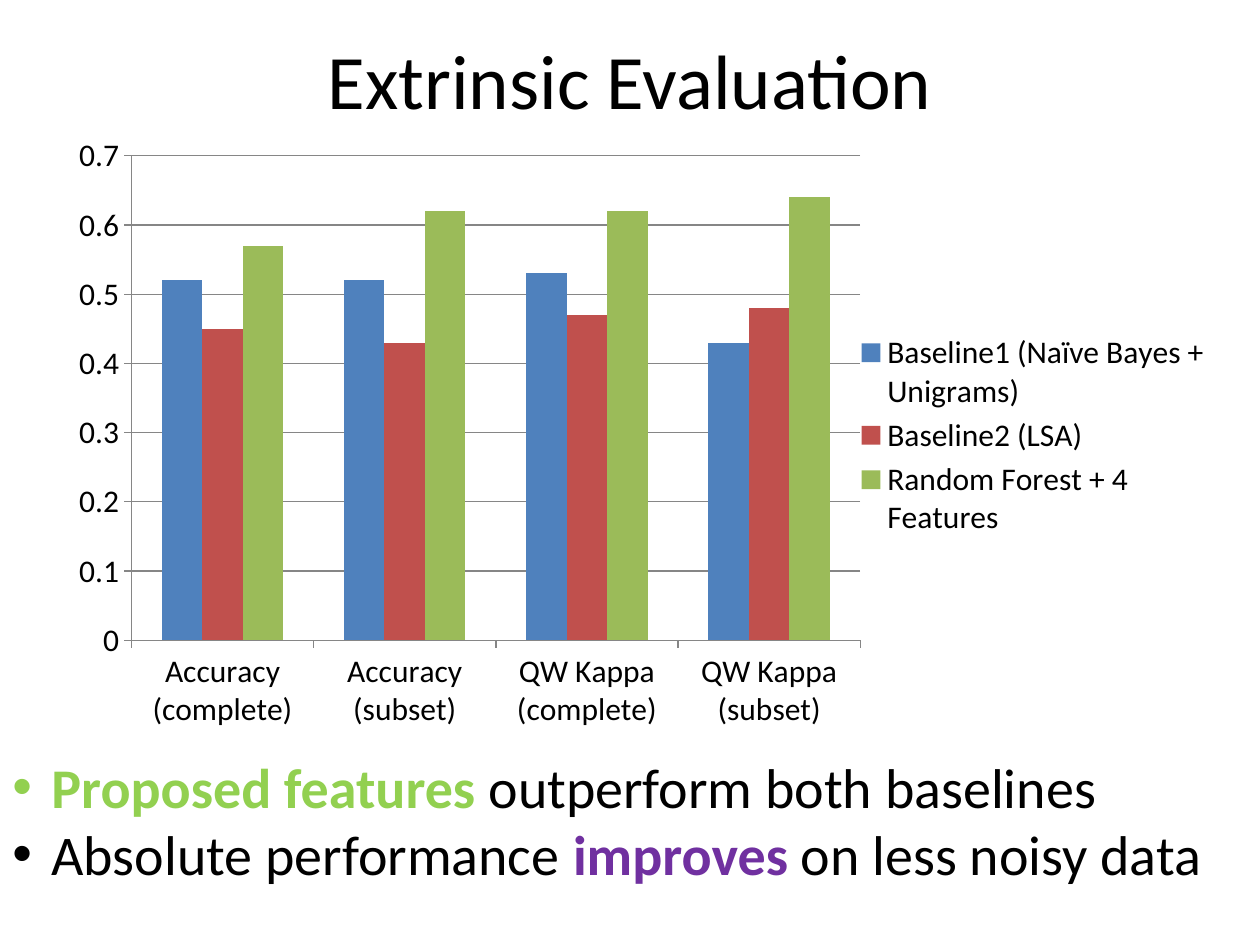
from typing import NamedTuple

from lxml import etree
from pptx import Presentation
from pptx.chart.data import CategoryChartData
from pptx.dml.color import RGBColor
from pptx.enum.chart import XL_CHART_TYPE, XL_LEGEND_POSITION, XL_TICK_MARK
from pptx.enum.text import MSO_ANCHOR, PP_ALIGN
from pptx.oxml.ns import qn
from pptx.util import Inches, Pt

COLUMNS = XL_CHART_TYPE.COLUMN_CLUSTERED
LEGEND_RIGHT = XL_LEGEND_POSITION.RIGHT
TICK_OUTSIDE = XL_TICK_MARK.OUTSIDE
MIDDLE = MSO_ANCHOR.MIDDLE
CENTER = PP_ALIGN.CENTER

FONT = "Calibri"
COLORS = {
    "text": "000000", "axis": "868686",
    "baseline1": "4F81BD", "baseline2": "C0504D", "forest": "9BBB59",
    "proposed": "92D050", "improves": "7030A0",
}


class Model(NamedTuple):
    name: str
    scores: tuple[float, ...]
    color: str


class Phrase(NamedTuple):
    text: str
    color: str = "text"
    bold: bool = False


MEASURES = ("Accuracy (complete)", "Accuracy (subset)",
            "QW Kappa (complete)", "QW Kappa (subset)")
MODELS = (
    Model("Baseline1 (Naïve Bayes + Unigrams)", (0.52, 0.52, 0.53, 0.43), "baseline1"),
    Model("Baseline2 (LSA)", (0.45, 0.43, 0.47, 0.48), "baseline2"),
    Model("Random Forest + 4 Features", (0.57, 0.62, 0.62, 0.64), "forest"),
)
FINDINGS = (
    (Phrase("Proposed features ", "proposed", True), Phrase("outperform both baselines")),
    (Phrase("Absolute performance "), Phrase("improves", "improves", True),
     Phrase(" on less noisy data")),
)
PLOT_AREA = {"x": 0.07, "y": 0.05, "w": 0.62, "h": 0.78}


def rgb(name: str) -> RGBColor:
    return RGBColor.from_string(COLORS[name])


def set_font(font, size: int) -> None:
    font.name, font.size = FONT, Pt(size)
    font.color.rgb = rgb("text")


def place_plot(chart) -> None:
    """Fix the inner plot area as fractions of the chart."""
    plot_area = chart.element.find(".//" + qn("c:plotArea"))
    for old in plot_area.findall(qn("c:layout")):
        plot_area.remove(old)
    layout = etree.Element(qn("c:layout"))
    manual = etree.SubElement(layout, qn("c:manualLayout"))
    settings = {"layoutTarget": "inner", "xMode": "edge", "yMode": "edge", **PLOT_AREA}
    for tag, value in settings.items():
        etree.SubElement(manual, qn("c:" + tag)).set("val", str(value))
    plot_area.insert(0, layout)


def style_line(line) -> None:
    line.color.rgb = rgb("axis")
    line.width = Pt(0.75)


def add_scores_chart(slide) -> None:
    scores = CategoryChartData()
    scores.categories = MEASURES
    for model in MODELS:
        scores.add_series(model.name, model.scores)
    chart = slide.shapes.add_chart(COLUMNS, Inches(0.39), Inches(0.99),
                                   Inches(9.33), Inches(4.93), scores).chart
    set_font(chart.font, 18)
    chart.has_title = False
    chart.has_legend = True
    chart.legend.position = LEGEND_RIGHT
    chart.legend.include_in_layout = False

    plot = chart.plots[0]
    plot.gap_width, plot.overlap = 150, 0
    plot.vary_by_categories = False
    for series, model in zip(plot.series, MODELS):
        series.format.fill.solid()
        series.format.fill.fore_color.rgb = rgb(model.color)

    for axis in (chart.category_axis, chart.value_axis):
        axis.major_tick_mark = TICK_OUTSIDE
        style_line(axis.format.line)
    scale = chart.value_axis
    scale.minimum_scale, scale.maximum_scale, scale.major_unit = 0, 0.7, 0.1
    scale.has_major_gridlines = True
    style_line(scale.major_gridlines.format.line)
    place_plot(chart)


def add_bullet(paragraph, indent: int) -> None:
    props = paragraph._p.get_or_add_pPr()
    props.set("marL", str(indent))
    props.set("indent", str(-indent))
    etree.SubElement(props, qn("a:buFont")).set("typeface", "Arial")
    etree.SubElement(props, qn("a:buChar")).set("char", "•")


def add_findings(slide) -> None:
    frame = slide.shapes.add_textbox(Inches(0), Inches(5.92),
                                     Inches(9.72), Inches(1.72)).text_frame
    frame.word_wrap = True
    for index, phrases in enumerate(FINDINGS):
        paragraph = frame.add_paragraph() if index else frame.paragraphs[0]
        add_bullet(paragraph, Inches(0.31))
        for phrase in phrases:
            run = paragraph.add_run()
            run.text = phrase.text
            set_font(run.font, 32)
            run.font.color.rgb = rgb(phrase.color)
            run.font.bold = phrase.bold


def main() -> None:
    deck = Presentation()
    deck.slide_width, deck.slide_height = Inches(10), Inches(7.5)
    slide = deck.slides.add_slide(deck.slide_layouts[5])

    # Title
    title = slide.shapes.title
    title.left, title.top = Inches(0.5), Inches(0)
    title.width, title.height = Inches(9), Inches(1.25)
    title.text_frame.text = "Extrinsic Evaluation"
    title.text_frame.vertical_anchor = MIDDLE
    heading = title.text_frame.paragraphs[0]
    heading.alignment = CENTER
    set_font(heading.font, 44)

    # Scores and findings
    add_scores_chart(slide)
    add_findings(slide)
    deck.save("out.pptx")


if __name__ == "__main__":
    main()
